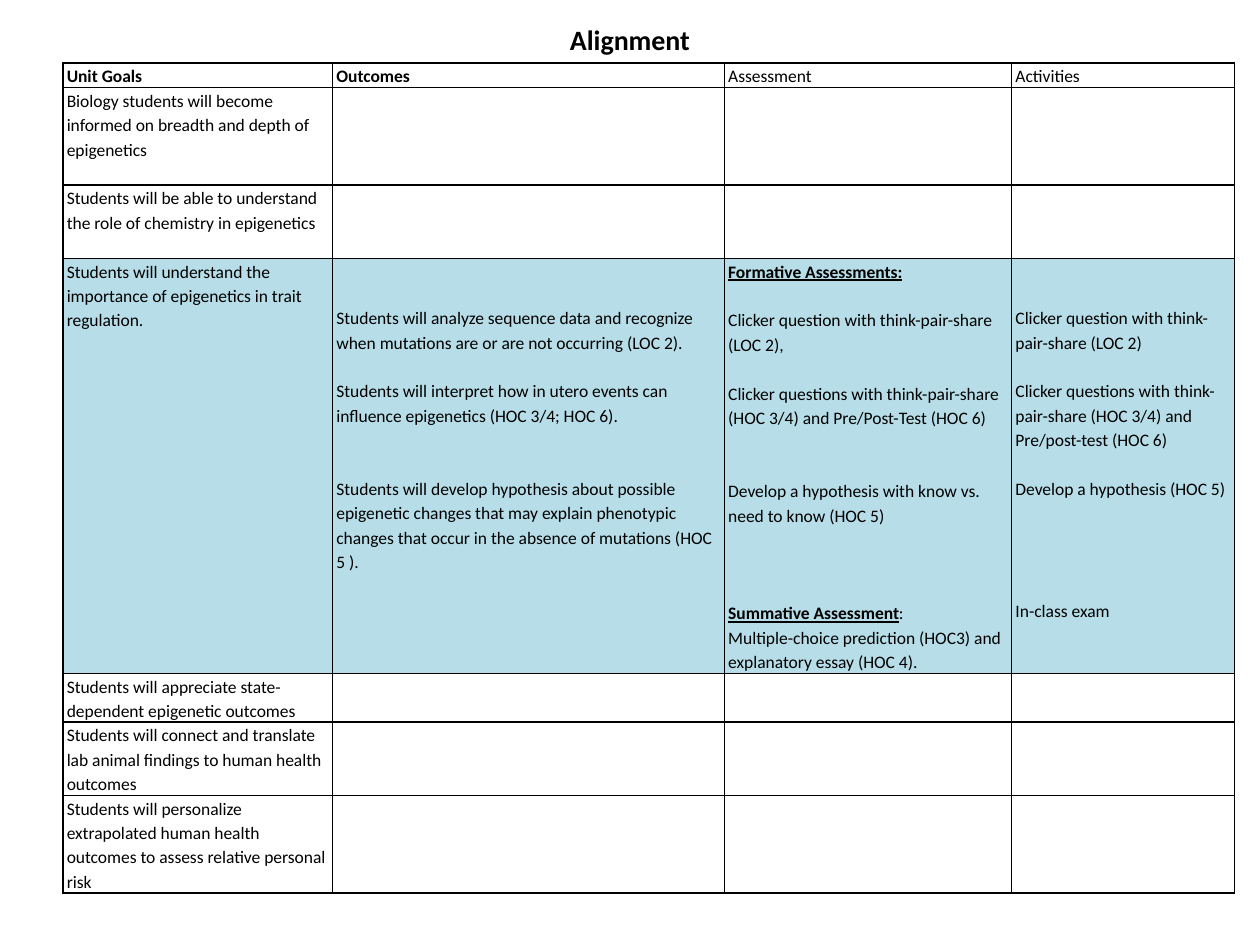
from lxml import etree
from pptx import Presentation
from pptx.dml.color import RGBColor
from pptx.enum import text
from pptx.oxml.ns import qn
from pptx.util import Inches, Pt

COLORS = {"ink": "000000", "plain": "FFFFFF", "focus": "B7DEE8"}
FONT = "Calibri"
LINE = 13.95  # points taken by one line of table text
TITLE = "Alignment"
HEADERS = ["Unit Goals", "Outcomes", "Assessment", "Activities"]
BOLD_HEADERS = 2
COLUMN_WIDTHS = [2.14, 3.11, 2.28, 1.77]

# Goal and height of its row in text lines
GOALS = [
    ("Biology students will become informed on breadth and depth of epigenetics", 4),
    ("Students will be able to understand the role of chemistry in epigenetics", 3),
    ("Students will understand the importance of epigenetics in trait regulation.", 17),
    ("Students will appreciate state-dependent epigenetic outcomes", 2),
    ("Students will connect and translate lab animal findings to human health outcomes", 3),
    ("Students will personalize extrapolated human health outcomes to assess "
     "relative personal risk", 4),
]
FOCUS_ROW = 3

# Cells beside the focus goal: top margin, then (lines of space before, heading, text)
FOCUS_CELLS = [
    (0.37, [
        (0, "", "Students will analyze sequence data and recognize when mutations are "
                "or are not occurring (LOC 2)."),
        (1, "", "Students will interpret how in utero events can influence epigenetics "
                "(HOC 3/4; HOC 6)."),
        (2, "", "Students will develop hypothesis about possible epigenetic changes that may "
                "explain phenotypic changes that occur in the absence of mutations (HOC 5 )."),
    ]),
    (0, [
        (0, "Formative Assessments:", ""),
        (1, "", "Clicker question with think-pair-share (LOC 2),"),
        (1, "", "Clicker questions with think-pair-share (HOC 3/4) and Pre/Post-Test (HOC 6)"),
        (2, "", "Develop a hypothesis with know vs. need to know (HOC 5)"),
        (3, "Summative Assessment", ":"),
        (0, "", "Multiple-choice prediction (HOC3) and explanatory essay (HOC 4)."),
    ]),
    (0.37, [
        (0, "", "Clicker question with think-pair-share (LOC 2)"),
        (1, "", "Clicker questions with think-pair-share (HOC 3/4) and Pre/post-test (HOC 6)"),
        (1, "", "Develop a hypothesis (HOC 5)"),
        (4, "", "In-class exam"),
    ]),
]


def style(r, size, bold=False, underline=False):
    r.font.name, r.font.size = FONT, Pt(size)
    r.font.bold, r.font.underline = bold, underline
    r.font.color.rgb = RGBColor.from_string(COLORS["ink"])


def format_cell(cell, color):
    """Set margins, black borders and fill."""
    cell.margin_left = cell.margin_right = Inches(0.03)
    cell.margin_top = cell.margin_bottom = 0
    props = cell._tc.get_or_add_tcPr()
    for side in ("a:lnL", "a:lnR", "a:lnT", "a:lnB"):
        ln = etree.SubElement(props, qn(side), w=str(Pt(1)))
        fill = etree.SubElement(ln, qn("a:solidFill"))
        etree.SubElement(fill, qn("a:srgbClr"), val=COLORS["ink"])
    cell.fill.solid()
    cell.fill.fore_color.rgb = RGBColor.from_string(COLORS[color])


def write(cell, paragraphs, bold=False):
    tf = cell.text_frame
    for i, (gap, heading, body) in enumerate(paragraphs):
        p = tf.add_paragraph() if i else tf.paragraphs[0]
        p.line_spacing = 1.15
        if gap:
            p.space_before = Pt(gap * LINE)
        for words, is_heading in ((heading, True), (body, False)):
            if words:
                r = p.add_run()
                r.text = words
                style(r, 10, bold or is_heading, is_heading)


def add_title(s):
    title = s.shapes.title
    title.left, title.top = Inches(0.5), Inches(-0.04)
    title.width, title.height = Inches(9), Inches(0.7)
    tf = title.text_frame
    tf.text = TITLE
    tf.vertical_anchor = text.MSO_ANCHOR.MIDDLE
    p = tf.paragraphs[0]
    p.alignment = text.PP_ALIGN.CENTER
    style(p.runs[0], 16, bold=True)


def add_alignment_table(s):
    heights = [Pt(n * LINE) for n in [1] + [lines for _, lines in GOALS]]
    table = s.shapes.add_table(
        len(heights), len(HEADERS), Inches(0.5), Inches(0.5),
        Inches(sum(COLUMN_WIDTHS)), sum(heights)).table
    table.first_row = table.horz_banding = False
    for column, width in zip(table.columns, COLUMN_WIDTHS):
        column.width = Inches(width)
    for i, (row, height) in enumerate(zip(table.rows, heights)):
        row.height = height
        for cell in row.cells:
            format_cell(cell, "focus" if i == FOCUS_ROW else "plain")

    for j, header in enumerate(HEADERS):
        write(table.cell(0, j), [(0, "", header)], bold=j < BOLD_HEADERS)
    for i, (goal, _) in enumerate(GOALS, 1):
        write(table.cell(i, 0), [(0, "", goal)])
    for j, (top, paragraphs) in enumerate(FOCUS_CELLS, 1):
        cell = table.cell(FOCUS_ROW, j)
        cell.margin_top = Inches(top)
        write(cell, paragraphs)


def main():
    prs = Presentation()
    prs.slide_width, prs.slide_height = Inches(10), Inches(7.5)
    s = prs.slides.add_slide(prs.slide_layouts[5])
    add_title(s)
    add_alignment_table(s)
    prs.save("out.pptx")


if __name__ == "__main__":
    main()
